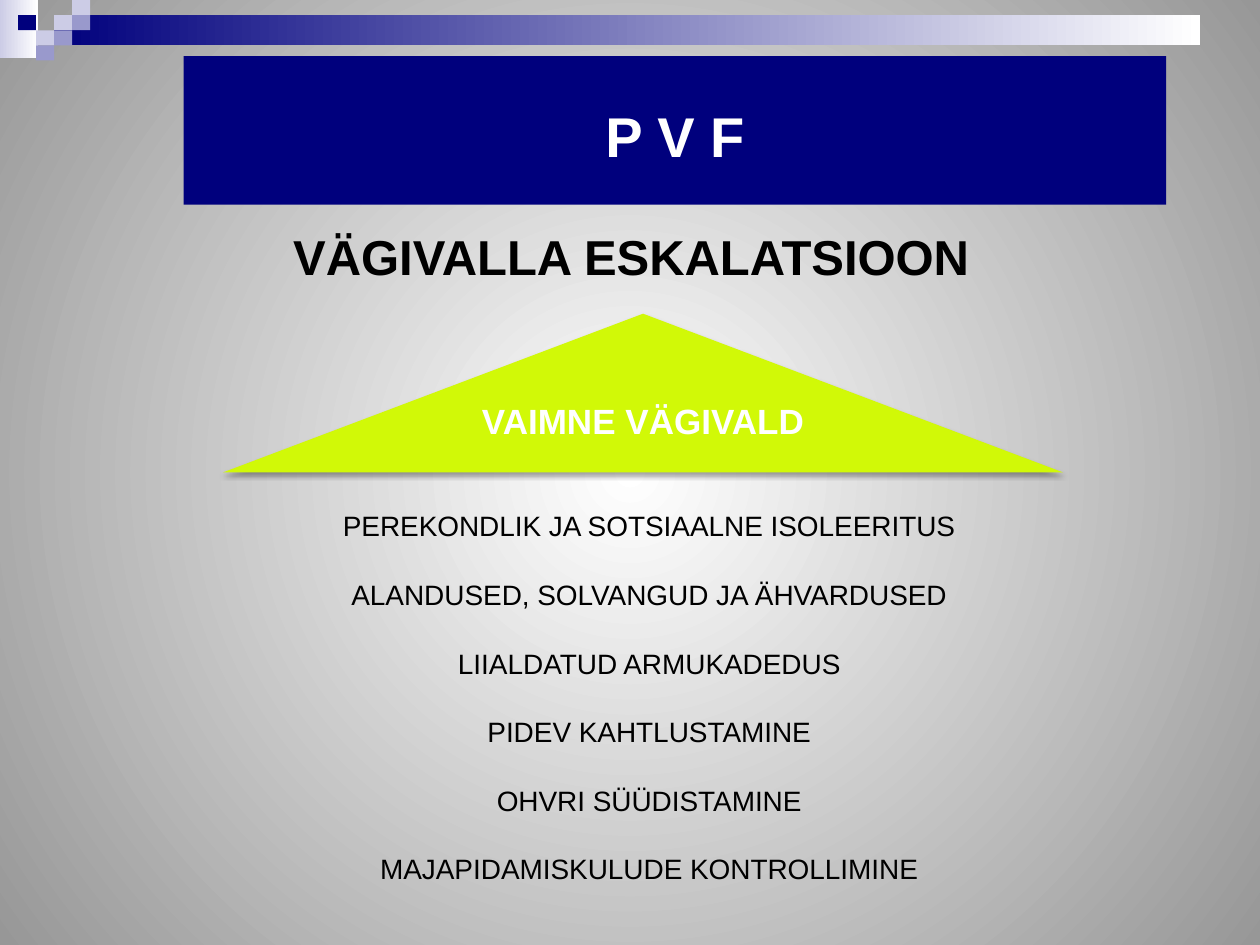
from dataclasses import dataclass

from lxml.etree import SubElement as Sub
from pptx import Presentation
from pptx.dml.color import RGBColor as RGB
from pptx.enum.shapes import MSO_SHAPE as Form
from pptx.enum.text import MSO_ANCHOR as Anchor, PP_ALIGN as Align
from pptx.oxml.ns import qn
from pptx.util import Pt


@dataclass(frozen=True)
class Theme:
    font: str = "Arial"
    navy: str = "00007D"
    mid: str = "9999CC"
    pale: str = "CCCCE6"
    white: str = "FFFFFF"
    gray: str = "979797"
    black: str = "000000"
    lime: str = "D1F907"
    title: int = 32
    head: int = 28
    label: int = 20
    text: int = 16


T = Theme()
ITEMS = [
    "PEREKONDLIK JA SOTSIAALNE ISOLEERITUS",
    "ALANDUSED, SOLVANGUD JA ÄHVARDUSED",
    "LIIALDATUD ARMUKADEDUS",
    "PIDEV KAHTLUSTAMINE",
    "OHVRI SÜÜDISTAMINE",
    "MAJAPIDAMISKULUDE KONTROLLIMINE",
]


def blend(fill, start, end):
    fill.gradient()
    fill.gradient_angle = 0
    for stop, color in zip(fill.gradient_stops, (start, end)):
        stop.color.rgb = RGB.from_string(color)


def block(slide, box, *colors, form=Form.RECTANGLE):
    """Add a borderless shape with one colour or a two-colour blend."""
    shape = slide.shapes.add_shape(form, *map(Pt, box))
    shape.shadow.inherit = False
    shape.line.fill.background()
    if len(colors) == 2:
        blend(shape.fill, *colors)
    else:
        shape.fill.solid()
        shape.fill.fore_color.rgb = RGB.from_string(colors[0])
    return shape


def write(shape, lines, size, color, bold=False, gap=0, top=3.6, anchor=Anchor.TOP):
    frame = shape.text_frame
    frame.word_wrap = True
    frame.margin_top = Pt(top)
    frame.vertical_anchor = anchor
    for i, line in enumerate(lines):
        para = frame.paragraphs[0] if i == 0 else frame.add_paragraph()
        para.text = line
        para.alignment = Align.CENTER
        para.space_before = Pt(gap if i else 0)
        para.font.name = T.font
        para.font.size = Pt(size)
        para.font.bold = bold
        para.font.color.rgb = RGB.from_string(color)


def label(slide, box, lines, size, color, **style):
    shape = slide.shapes.add_textbox(*map(Pt, box))
    write(shape, lines, size, color, **style)
    return shape


def backdrop(slide):
    """Radial blend from the middle of the slide."""
    blend(slide.background.fill, T.white, T.gray)
    grad = slide.element.find(".//" + qn("a:gradFill"))
    grad.remove(grad.find(qn("a:lin")))
    ring = Sub(grad, qn("a:path"), path="circle")
    Sub(ring, qn("a:fillToRect"), dict.fromkeys("ltrb", "50000"))


def banner(slide, box):
    """Top strip with a checker of small squares at its left end."""
    x, y, w, h = box
    cell_w, cell_h = 10.3, 8.64
    block(slide, (x, y, 21.6, h), T.pale, T.white)
    block(slide, (x + 3 * cell_w, y + cell_h, w - 3 * cell_w, 2 * cell_h),
          T.navy, T.white)
    cells = [(3, 1, T.pale), (4, 0, T.pale), (4, 1, T.mid), (2, 2, T.pale),
             (1, 1, T.navy), (3, 2, T.mid), (2, 3, T.mid)]
    for col, row, color in cells:
        block(slide, (x + col * cell_w, y + row * cell_h, cell_w, cell_h), color)


def header(slide, box):
    shape = block(slide, box, T.navy)
    write(shape, ["P V F"], T.title, T.white, bold=True, top=9, anchor=Anchor.MIDDLE)


def peak(slide, box):
    """Trapezoid narrowed to a point, with a soft shadow and a label."""
    x, y, w, h = box
    shape = block(slide, box, T.lime, form=Form.TRAPEZOID)
    shape.adjustments[0] = w / 2 / h
    effects = shape.element.spPr.find(qn("a:effectLst"))
    shade = Sub(effects, qn("a:outerShdw"), blurRad=str(Pt(3.1)),
                dist=str(Pt(1.8)), dir="5400000", rotWithShape="0")
    Sub(Sub(shade, qn("a:srgbClr"), val=T.black), qn("a:alpha"), val="35000")
    label(slide, box, ["VAIMNE VÄGIVALD"], T.label, T.white, bold=True,
          top=33, anchor=Anchor.MIDDLE).text_frame.margin_bottom = Pt(2)


def main():
    deck = Presentation()
    deck.slide_width, deck.slide_height = Pt(720), Pt(540)
    slide = deck.slides.add_slide(deck.slide_layouts[6])
    backdrop(slide)
    banner(slide, (0, 0, 686, 33))
    header(slide, (105, 32, 561.5, 85))
    label(slide, (36.7, 122.4, 648, 46), ["VÄGIVALLA ESKALATSIOON"],
          T.head, T.black, bold=True, top=7)
    peak(slide, (127.4, 179.3, 480.2, 90.7))
    label(slide, (127.4, 287.3, 487.4, 220.3), ITEMS, T.text, T.black, gap=20)
    deck.save("out.pptx")


if __name__ == "__main__":
    main()
